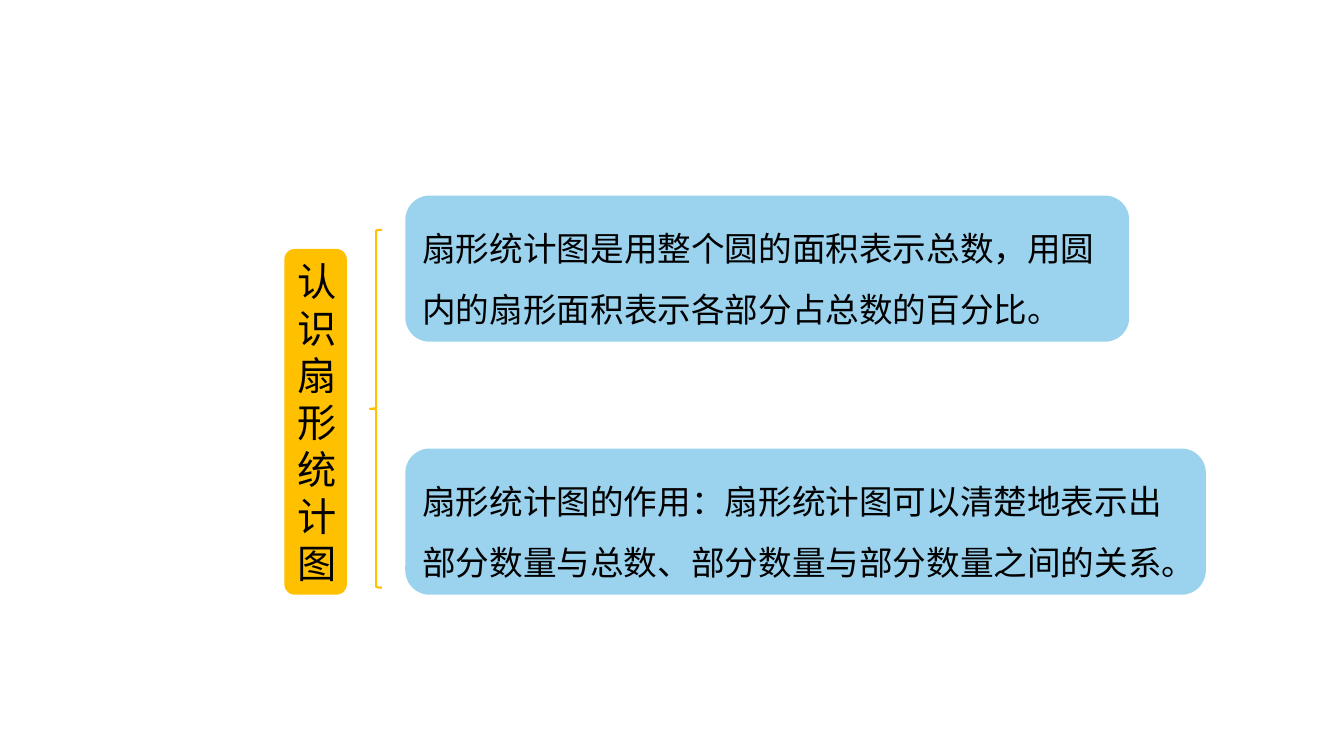
from pptx import Presentation, util as u
from pptx.dml.color import RGBColor
from pptx.enum import shapes, text
from pptx.oxml.ns import qn
from lxml import etree

HUES = {"gold": "FFC000", "blue": "9BD3EF", "ink": "000000"}
FONT = "Noto Sans CJK SC"
TOPIC = "认识扇形统计图"
POINTS = [
    (7.18, "扇形统计图是用整个圆的面积表示总数，用圆内的扇形面积表示各部分占总数的百分比。"),
    (7.94, "扇形统计图的作用：扇形统计图可以清楚地表示出部分数量与总数、部分数量与部分数量之间的关系。"),
]


def hue(name):
    return RGBColor.from_string(HUES[name])


def add_form(slide, kind, box):
    form = slide.shapes.add_shape(kind, *map(u.Inches, box))
    form.shadow.inherit = False
    return form


def add_card(slide, box, fill, words, size, gap=1.0):
    card = add_form(slide, shapes.MSO_SHAPE.ROUNDED_RECTANGLE, box)
    card.fill.solid()
    card.fill.fore_color.rgb = hue(fill)
    card.line.fill.background()
    frame = card.text_frame
    frame.word_wrap = True
    frame.auto_size = text.MSO_AUTO_SIZE.SHAPE_TO_FIT_TEXT
    frame.vertical_anchor = text.MSO_ANCHOR.MIDDLE
    para = frame.paragraphs[0]
    para.alignment = text.PP_ALIGN.LEFT
    para.line_spacing = gap
    run = para.add_run()
    run.text = words
    run.font.size = u.Pt(size)
    run.font.name = FONT
    run.font.color.rgb = hue("ink")
    east = etree.SubElement(run.font._element, qn("a:ea"))
    east.set("typeface", FONT)


def add_brace(slide, box):
    brace = add_form(slide, shapes.MSO_SHAPE.LEFT_BRACE, box)
    brace.fill.background()
    brace.line.color.rgb = hue("gold")
    brace.line.width = u.Pt(1.5)


def add_points(slide, box):
    left, top, high, step = box
    for row, (wide, words) in enumerate(POINTS):
        add_card(slide, (left, top + row * step, wide, high), "blue", words, 24, 1.5)


def main():
    deck = Presentation()
    deck.slide_width = u.Inches(13.33)
    deck.slide_height = u.Inches(7.5)
    slide = deck.slides.add_slide(deck.slide_layouts.get_by_name("Blank"))
    add_card(slide, (2.82, 2.47, 0.62, 3.43), "gold", TOPIC, 28)
    add_brace(slide, (3.67, 2.28, 0.12, 3.55))
    add_points(slide, (4.02, 1.94, 1.45, 2.51))
    deck.save("out.pptx")


if __name__ == "__main__":
    main()
